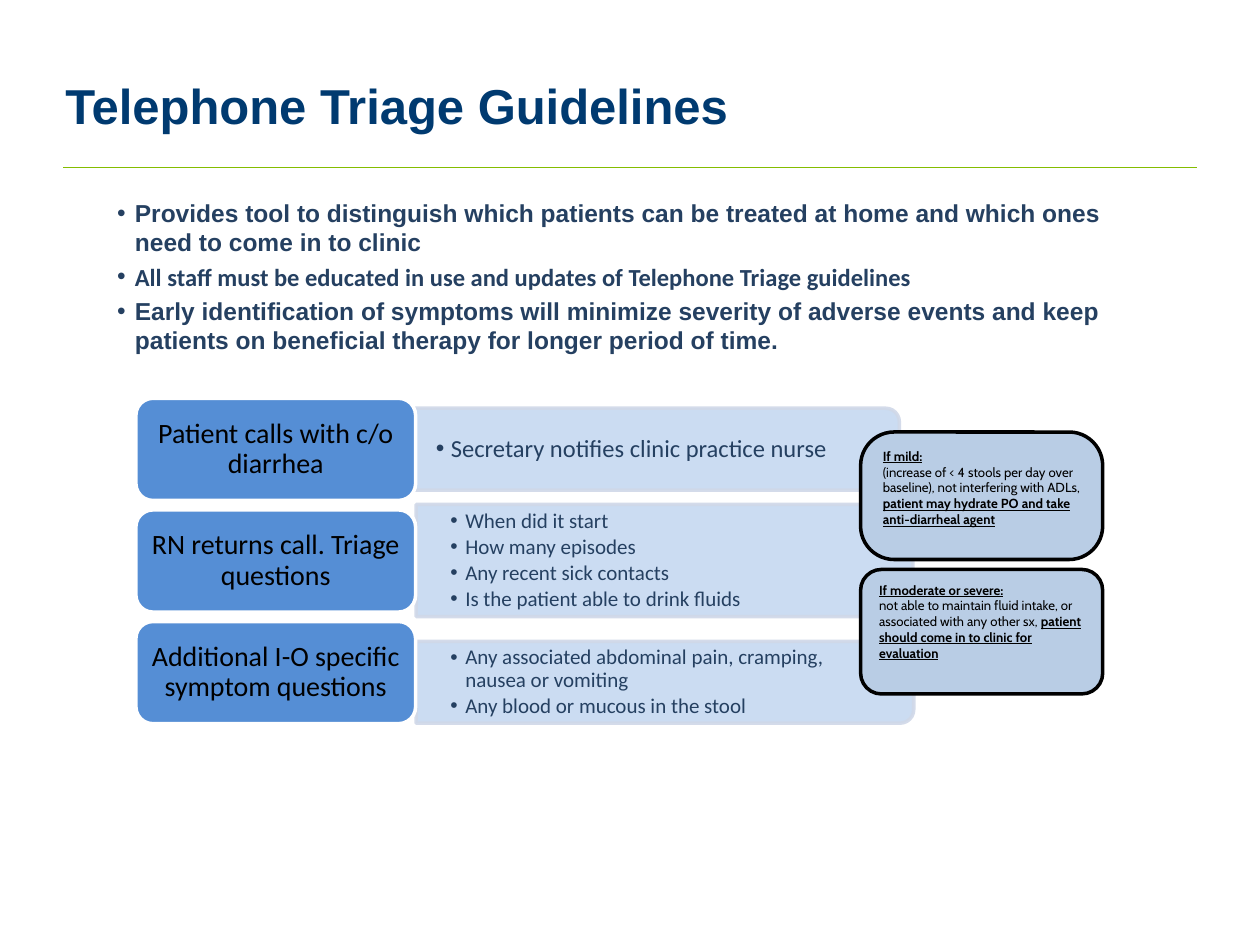
from dataclasses import dataclass
from typing import Any

import lxml.etree
import pptx
import pptx.dml.color
import pptx.enum.shapes
import pptx.enum.text
import pptx.oxml.ns
import pptx.util

Cm = pptx.util.Cm
Pt = pptx.util.Pt
Shapes = pptx.enum.shapes.MSO_SHAPE
Anchor = pptx.enum.text.MSO_ANCHOR
Align = pptx.enum.text.PP_ALIGN
qn = pptx.oxml.ns.qn


@dataclass(frozen=True)
class Theme:
    navy: str = "003A70"
    text: str = "254061"
    black: str = "000000"
    white: str = "FFFFFF"
    rule: str = "84BD00"
    label: str = "558ED5"
    panel: str = "C6D9F1"
    panel_edge: str = "D0D8E8"
    callout: str = "B9CDE5"
    heading_font: str = "Arial"
    body_font: str = "Calibri"
    callout_font: str = "Cabin"
    title_size: float = 28
    label_size: float = 16
    body_size: float = 14
    detail_size: float = 12
    callout_size: float = 7.5
    panel_opacity: int = 90


THEME = Theme()


@dataclass(frozen=True)
class Box:
    left: float
    top: float
    width: float
    height: float

    def lengths(self) -> tuple:
        return Cm(self.left), Cm(self.top), Cm(self.width), Cm(self.height)


@dataclass(frozen=True)
class Step:
    label: str
    details: tuple[str, ...]
    panel: Box
    size: float


@dataclass(frozen=True)
class Callout:
    heading: str
    condition: str
    action: str
    box: Box
    rounding: float


BULLETS = (
    ("Provides tool to distinguish which patients can be treated at home and which ones "
     "need to come in to clinic", THEME.heading_font),
    ("All staff must be educated in use and updates of Telephone Triage guidelines",
     THEME.body_font),
    ("Early identification of symptoms will minimize severity of adverse events and keep "
     "patients on beneficial therapy for longer period of time.", THEME.heading_font),
)
STEPS = (
    Step("Patient calls with c/o diarrhea", ("Secretary notifies clinic practice nurse",),
         Box(8.1, 8.23, 10.03, 1.65), THEME.body_size),
    Step("RN returns call. Triage questions",
         ("When did it start", "How many episodes", "Any recent sick contacts",
          "Is the patient able to drink fluids"),
         Box(8.39, 10.17, 10.01, 2.26), THEME.detail_size),
    Step("Additional I-O specific symptom questions",
         ("Any associated abdominal pain, cramping, nausea or vomiting",
          "Any blood or mucous in the stool"),
         Box(8.39, 12.93, 10.03, 1.65), THEME.detail_size),
)
CALLOUTS = (
    Callout("If mild:",
            "(increase of < 4 stools per day over baseline), not interfering with ADLs, ",
            "patient may hydrate PO and take anti-diarrheal agent",
            Box(17.35, 8.71, 4.88, 2.57), 0.263),
    Callout("If moderate or severe:",
            "not able to maintain fluid intake, or associated with any other sx, ",
            "patient should come in to clinic for evaluation",
            Box(17.35, 11.48, 4.88, 2.51), 0.167),
)
LABEL_TOP, LABEL_PITCH = 8.03, 2.25


def rgb(color: str) -> pptx.dml.color.RGBColor:
    return pptx.dml.color.RGBColor.from_string(color)


def format_runs(paragraph: Any, font: str, size: float, color: str, bold: bool = False) -> None:
    for run in paragraph.runs:
        run.font.name, run.font.size, run.font.bold = font, Pt(size), bold
        run.font.color.rgb = rgb(color)


def add_bullet(paragraph: Any, indent: float) -> None:
    properties = paragraph._p.get_or_add_pPr()
    properties.set("marL", str(Cm(indent)))
    properties.set("indent", str(-Cm(indent)))
    lxml.etree.SubElement(properties, qn("a:buFont")).set("typeface", "Arial")
    lxml.etree.SubElement(properties, qn("a:buChar")).set("char", "•")


def set_opacity(shape: Any, percent: int) -> None:
    for color in shape._element.spPr.iter(qn("a:srgbClr")):
        lxml.etree.SubElement(color, qn("a:alpha")).set("val", str(percent * 1000))


def set_frame(shape: Any, anchor: Any, horizontal: float = 0.25, vertical: float = 0.13) -> Any:
    frame = shape.text_frame
    frame.word_wrap = True
    frame.vertical_anchor = anchor
    frame.margin_left = frame.margin_right = Cm(horizontal)
    frame.margin_top = frame.margin_bottom = Cm(vertical)
    return frame


def add_block(slide: Any, kind: Any, box: Box, fill: str, edge: str) -> Any:
    shape = slide.shapes.add_shape(kind, *box.lengths())
    shape.shadow.inherit = False
    shape.fill.solid()
    shape.fill.fore_color.rgb = rgb(fill)
    shape.line.color.rgb = rgb(edge)
    shape.line.width = Pt(2)
    return shape


def add_header(slide: Any) -> None:
    rule = slide.shapes.add_connector(pptx.enum.shapes.MSO_CONNECTOR.STRAIGHT,
                                      Cm(1.27), Cm(3.38), Cm(24.13), Cm(3.38))
    rule.line.color.rgb = rgb(THEME.rule)
    rule.line.width = Pt(0.75)
    lxml.etree.SubElement(rule._element.spPr, qn("a:effectLst"))

    title = slide.shapes.add_textbox(*Box(1.07, 1.27, 19.74, 1.7).lengths())
    frame = set_frame(title, Anchor.MIDDLE)
    frame.text = "Telephone Triage Guidelines"
    format_runs(frame.paragraphs[0], THEME.heading_font, THEME.title_size, THEME.navy, True)


def add_bullets(slide: Any) -> None:
    body = slide.shapes.add_textbox(*Box(2.11, 3.86, 20.52, 3.4).lengths())
    frame = set_frame(body, Anchor.TOP)
    frame.text = "\n".join(text for text, _ in BULLETS)
    for index, (paragraph, (_, font)) in enumerate(zip(frame.paragraphs, BULLETS)):
        add_bullet(paragraph, 0.36)
        if index:
            paragraph.space_before = Pt(2.8)
        format_runs(paragraph, font, THEME.body_size, THEME.text, True)


def add_step(slide: Any, step: Step, label_top: float) -> None:
    # Panel, turned so that its rounded end faces right
    panel = step.panel
    upright = Box(panel.left + (panel.width - panel.height) / 2,
                  panel.top + (panel.height - panel.width) / 2, panel.height, panel.width)
    shape = add_block(slide, Shapes.ROUND_2_SAME_RECTANGLE, upright,
                      THEME.panel, THEME.panel_edge)
    shape.rotation = 90
    set_opacity(shape, THEME.panel_opacity)

    # Details over the panel
    area = Box(panel.left, panel.top + 0.08, panel.width - 0.08, panel.height - 0.16)
    frame = set_frame(slide.shapes.add_textbox(*area.lengths()), Anchor.MIDDLE, 0.69, 0.36)
    frame.text = "\n".join(step.details)
    for paragraph in frame.paragraphs:
        paragraph.level = 1
        add_bullet(paragraph, 0.3)
        paragraph.line_spacing = 0.9
        paragraph.space_after = Pt(step.size * 0.15)
        format_runs(paragraph, THEME.body_font, step.size, THEME.text)

    # Label
    label = add_block(slide, Shapes.ROUNDED_RECTANGLE, Box(2.74, label_top, 5.64, 2.06),
                      THEME.label, THEME.white)
    frame = set_frame(label, Anchor.MIDDLE, 0.18, 0.08)
    frame.text = step.label
    paragraph = frame.paragraphs[0]
    paragraph.alignment = Align.CENTER
    paragraph.line_spacing = 0.9
    format_runs(paragraph, THEME.body_font, THEME.label_size, THEME.black)


def add_callout(slide: Any, callout: Callout) -> None:
    shape = add_block(slide, Shapes.ROUNDED_RECTANGLE, callout.box, THEME.callout, THEME.black)
    shape.adjustments[0] = callout.rounding
    frame = set_frame(shape, Anchor.TOP)
    frame.text = f"{callout.heading}\n{callout.condition}"
    heading, advice = frame.paragraphs
    advice.add_run().text = callout.action
    for paragraph in (heading, advice):
        paragraph.alignment = Align.LEFT
        format_runs(paragraph, THEME.callout_font, THEME.callout_size, THEME.black)
    for run in (heading.runs[0], advice.runs[-1]):
        run.font.bold = run.font.underline = True


def main() -> None:
    presentation = pptx.Presentation()
    presentation.slide_width, presentation.slide_height = Cm(25.4), Cm(19.05)
    slide = presentation.slides.add_slide(presentation.slide_layouts[6])
    add_header(slide)
    add_bullets(slide)
    for index, step in enumerate(STEPS):
        add_step(slide, step, LABEL_TOP + index * LABEL_PITCH)
    for callout in CALLOUTS:
        add_callout(slide, callout)
    presentation.save("out.pptx")


if __name__ == "__main__":
    main()
